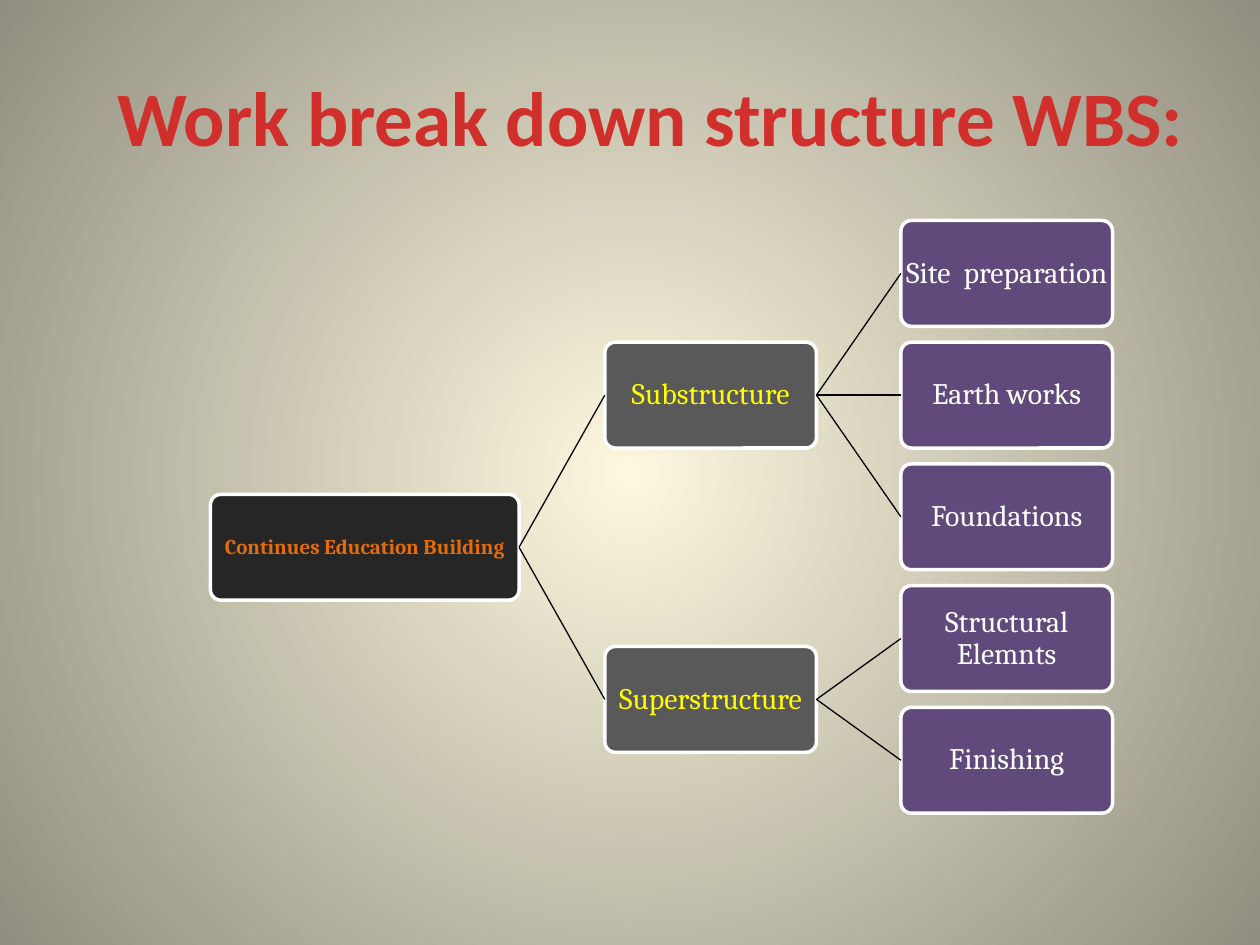
"""Build a work breakdown structure slide as a horizontal tree."""
from dataclasses import dataclass, field
from typing import Any

from lxml import etree
from pptx import Presentation
from pptx import util as u
from pptx.dml.color import RGBColor
from pptx.enum import shapes, text
from pptx.oxml import parse_xml
from pptx.oxml.ns import nsdecls, qn

COLORS = {
    "center": "FCF7DD", "edge": "918E81", "title": "D02F2C",
    "root": "262626", "branch": "595959", "leaf": "604A7B",
    "orange": "E46C0A", "yellow": "FFFF00", "white": "FFFFFF", "black": "000000",
}
TOP, HEIGHT = 1.75, 0.84
PITCH = 1.15 * HEIGHT


@dataclass(frozen=True)
class Level:
    left: float
    width: float
    fill: str
    color: str
    size: int = 17
    bold: bool = False


@dataclass
class Node:
    label: str
    children: list["Node"] = field(default_factory=list)


LEVELS = [
    Level(1.67, 2.45, "root", "orange", 12, True),
    Level(4.8, 1.68, "branch", "yellow"),
    Level(7.15, 1.68, "leaf", "white"),
]
WBS = Node("Continues Education Building", [
    Node("Substructure", [
        Node("Site  preparation"), Node("Earth works"), Node("Foundations")]),
    Node("Superstructure", [Node("Structural Elemnts"), Node("Finishing")]),
])


def rgb(name: str) -> RGBColor:
    return RGBColor.from_string(COLORS[name])


def write(tf: Any, content: str, *, font: str, size: int, color: str,
          bold: bool = False, align: Any = text.PP_ALIGN.CENTER,
          spacing: float = 1.0, inset: float = 0.01) -> None:
    tf.word_wrap = True
    tf.auto_size = text.MSO_AUTO_SIZE.NONE
    tf.vertical_anchor = text.MSO_ANCHOR.MIDDLE
    tf.margin_left = tf.margin_right = u.Inches(inset)
    tf.margin_top = tf.margin_bottom = u.Inches(inset)
    p = tf.paragraphs[0]
    p.alignment, p.line_spacing = align, spacing
    r = p.add_run()
    r.text = content
    r.font.name, r.font.size, r.font.bold = font, u.Pt(size), bold
    r.font.color.rgb = rgb(color)


def set_background(s: Any) -> None:
    fill = s.background.fill
    fill.gradient()
    for stop, name in zip(fill.gradient_stops, ("center", "edge")):
        stop.color.rgb = rgb(name)
    grad = s.element.find(".//" + qn("a:gradFill"))
    grad.replace(grad.find(qn("a:lin")), parse_xml(
        f'<a:path {nsdecls("a")} path="circle">'
        '<a:fillToRect l="50000" t="50000" r="50000" b="50000"/></a:path>'))


def add_box(s: Any, label: str, level: Level, row: float) -> Any:
    sp = s.shapes.add_shape(
        shapes.MSO_SHAPE.ROUNDED_RECTANGLE, u.Inches(level.left),
        u.Inches(TOP + row * PITCH), u.Inches(level.width), u.Inches(HEIGHT))
    sp.adjustments[0] = 0.1
    sp.shadow.inherit = False
    sp.fill.solid()
    sp.fill.fore_color.rgb = rgb(level.fill)
    sp.line.color.rgb, sp.line.width = rgb("white"), u.Pt(2)
    write(sp.text_frame, label, font="Cambria", size=level.size,
          color=level.color, bold=level.bold, spacing=0.9)
    return sp


def link(s: Any, parent: Any, child: Any) -> None:
    line = s.shapes.add_connector(shapes.MSO_CONNECTOR.STRAIGHT, 0, 0, 0, 0)
    line.begin_connect(parent, 3)
    line.end_connect(child, 1)
    line.line.color.rgb, line.line.width = rgb("black"), u.Pt(0.75)
    etree.SubElement(line._element.spPr, qn("a:effectLst"))


def draw_tree(s: Any, node: Node, depth: int = 0, row: int = 0) -> tuple[Any, float, int]:
    """Return the node's box, its row and the next free leaf row."""
    boxes, rows, following = [], [], row
    for child in node.children:
        box, child_row, following = draw_tree(s, child, depth + 1, following)
        boxes.append(box)
        rows.append(child_row)
    center = sum(rows) / len(rows) if rows else row
    sp = add_box(s, node.label, LEVELS[depth], center)
    for box in boxes:
        link(s, sp, box)
    return sp, center, following if rows else row + 1


def main() -> None:
    prs = Presentation()
    prs.slide_width, prs.slide_height = u.Inches(10), u.Inches(7.5)
    s = prs.slides.add_slide(prs.slide_layouts[5])
    set_background(s)
    title = s.shapes.title
    title.left, title.top = u.Inches(0.83), u.Inches(0.29)
    title.width, title.height = u.Inches(8.83), u.Inches(1.25)
    write(title.text_frame, "Work break down structure WBS:", font="Calibri", size=44,
          color="title", bold=True, align=text.PP_ALIGN.LEFT, inset=0.1)
    draw_tree(s, WBS)
    prs.save("out.pptx")


if __name__ == "__main__":
    main()
